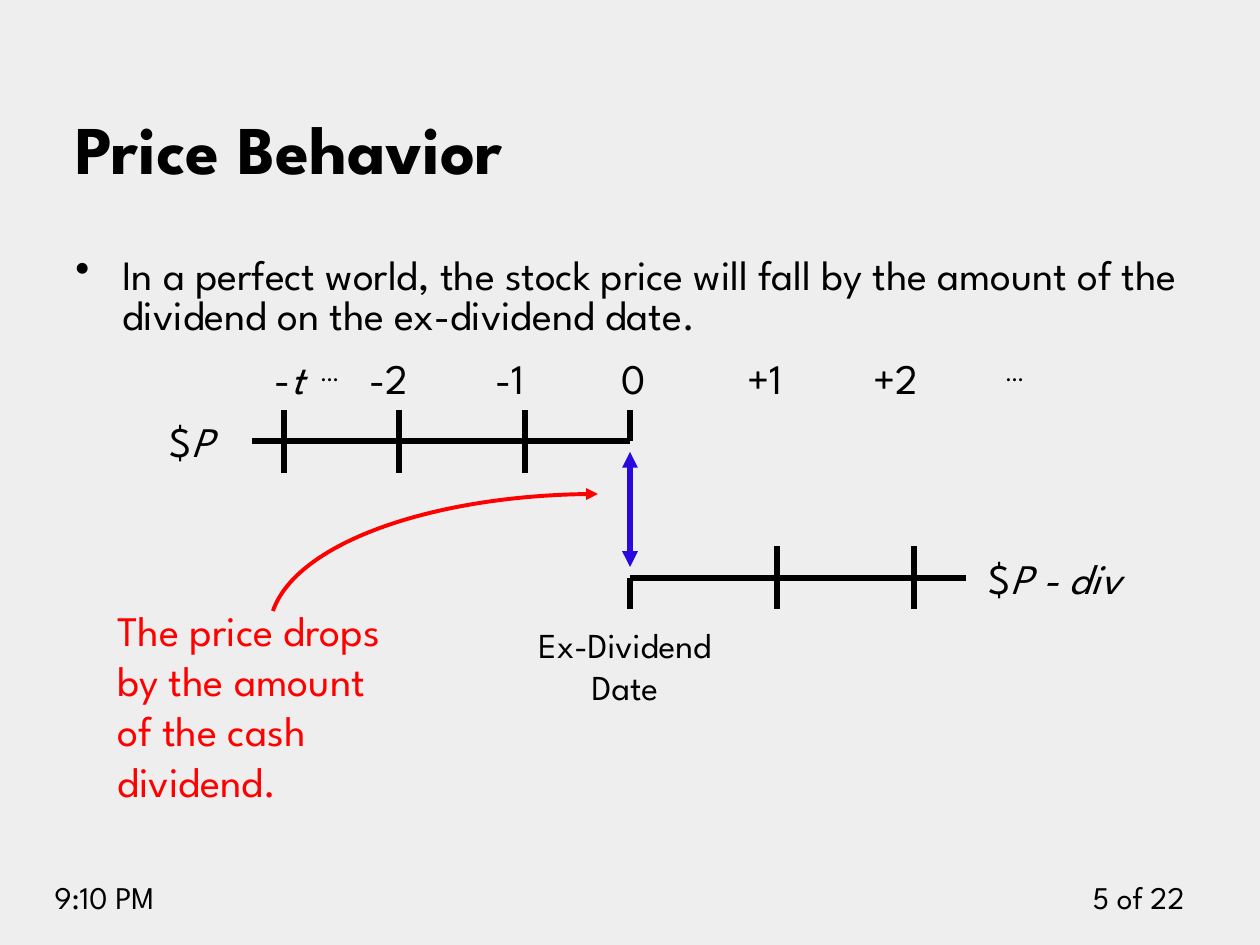
from lxml.etree import SubElement
from pptx import Presentation
from pptx.dml.color import RGBColor
from pptx.enum.shapes import MSO_CONNECTOR
from pptx.enum.text import MSO_ANCHOR, PP_ALIGN
from pptx.oxml.ns import qn
from pptx.util import Emu, Pt

SCALE = 914400 / 126  # EMU per px
BLACK, RED, BLUE, GREY = "000000", "FF0000", "280ADE", "EEEEEE"


def px(length):
    return Emu(round(length * SCALE))


def color(value):
    return RGBColor.from_string(value)


class SlideBuilder:
    font_name = "League Spartan"

    def __init__(self, slide):
        self.slide = slide
        slide.background.fill.solid()
        slide.background.fill.fore_color.rgb = color(GREY)

    def text(self, box, runs, size, ink=BLACK, anchor=MSO_ANCHOR.TOP,
             bullet=None, indent=0, **paragraph_format):
        """Runs are (text, font values, baseline in 1/1000 %)."""
        shape = self.slide.shapes.add_textbox(*map(px, box))
        frame = shape.text_frame
        frame.word_wrap = True
        frame.vertical_anchor = anchor
        paragraph = frame.paragraphs[0]
        if bullet:
            properties = paragraph._p.get_or_add_pPr()
            properties.set("marL", str(px(indent)))
            properties.set("indent", str(px(-indent)))
            SubElement(properties, qn("a:buChar"), char=bullet)
        for name, value in paragraph_format.items():
            setattr(paragraph, name, value)
        for words, changes, baseline in runs:
            run = paragraph.add_run()
            run.text = words
            values = {"name": self.font_name, "size": Pt(size), **changes}
            for name, value in values.items():
                setattr(run.font, name, value)
            run.font.color.rgb = color(ink)
            if baseline:
                run.font._element.set("baseline", str(baseline))

    def stroke(self, shape, ink, width, arrows=()):
        shape.line.color.rgb = color(ink)
        shape.line.width = Pt(width)
        for end in arrows:
            SubElement(shape.line._get_or_add_ln(), qn(f"a:{end}"), type="triangle")

    def line(self, x1, y1, x2, y2, ink=BLACK, width=3, arrows=()):
        connector = self.slide.shapes.add_connector(
            MSO_CONNECTOR.STRAIGHT, px(x1), px(y1), px(x2), px(y2))
        self.stroke(connector, ink, width, arrows)
        SubElement(connector._element.spPr, qn("a:effectLst"))

    def curve(self, start, controls_and_end, ink, width):
        builder = self.slide.shapes.build_freeform(*start, scale=SCALE)
        builder.add_line_segments(controls_and_end, close=False)
        shape = builder.convert_to_shape()
        # Join the three straight segments into one Bezier segment
        segments = list(shape._element.iter(qn("a:lnTo")))
        path = segments[0].getparent()
        bezier = SubElement(path, qn("a:cubicBezTo"))
        for segment in segments:
            bezier.append(segment[0])
            path.remove(segment)
        shape.shadow.inherit = False
        shape.fill.background()
        self.stroke(shape, ink, width, ["tailEnd"])


def plain(words, **font):
    return words, font, 0


def italic(words):
    return plain(words, italic=True)


def raised(words):
    return words, {}, 30000


def main():
    presentation = Presentation()
    presentation.slide_width, presentation.slide_height = px(1260), px(945)
    page = SlideBuilder(presentation.slides.add_slide(presentation.slide_layouts[6]))

    # Footer
    page.text((1050, 872, 147, 50), [plain("5 of 22")], 18, alignment=PP_ALIGN.RIGHT)
    page.text((42, 872, 199, 50), [plain("9:10 PM")], 18)

    # Title and statement
    page.text((63, 36, 1134, 158), [plain("Price Behavior", bold=True)], 39,
              anchor=MSO_ANCHOR.BOTTOM)
    page.text((63, 252, 1134, 108),
              [plain("In a perfect world, the stock price will fall by the amount "
                     "of the dividend on the ex-dividend date.")],
              23.8, bullet="•", indent=47, line_spacing=0.8)

    # Time scale: one label per equal step, with dots at both ends
    page.text((262, 346, 63, 63), [plain("-"), italic("t")], 24)
    for step, label in enumerate(("-2", "-1", "0", "+1", "+2")):
        page.text((357 + 126 * step, 346, 88, 63), [plain(label)], 24)
    for x in (308, 993):
        page.text((x, 346, 63, 63), [raised("…")], 24)

    # Price levels
    page.text((157, 409, 94, 63), [plain("$"), italic("P")], 24)
    page.text((976, 546, 178, 63), [plain("$"), italic("P - div")], 24)

    # Price before the ex-dividend date
    page.line(252, 441, 630, 441)
    for x in (284, 399, 525):
        page.line(x, 473, x, 410)
    page.line(630, 441, 630, 410)

    # Price after the ex-dividend date
    page.line(630, 578, 966, 578)
    page.line(630, 609, 630, 578)
    for x in (777, 914):
        page.line(x, 609, x, 546)

    # Price drop and its explanation
    page.line(630, 567, 630, 452, BLUE, arrows=["headEnd", "tailEnd"])
    page.curve((273, 611), [(296, 544), (435, 494), (598, 494)], RED, 2.25)
    page.text((504, 617, 242, 97), [plain("Ex-Dividend Date")], 20,
              alignment=PP_ALIGN.CENTER)
    page.text((105, 598, 315, 267),
              [plain("The price drops by the amount of the cash dividend.")], 24, RED)

    presentation.save("out.pptx")


if __name__ == "__main__":
    main()
